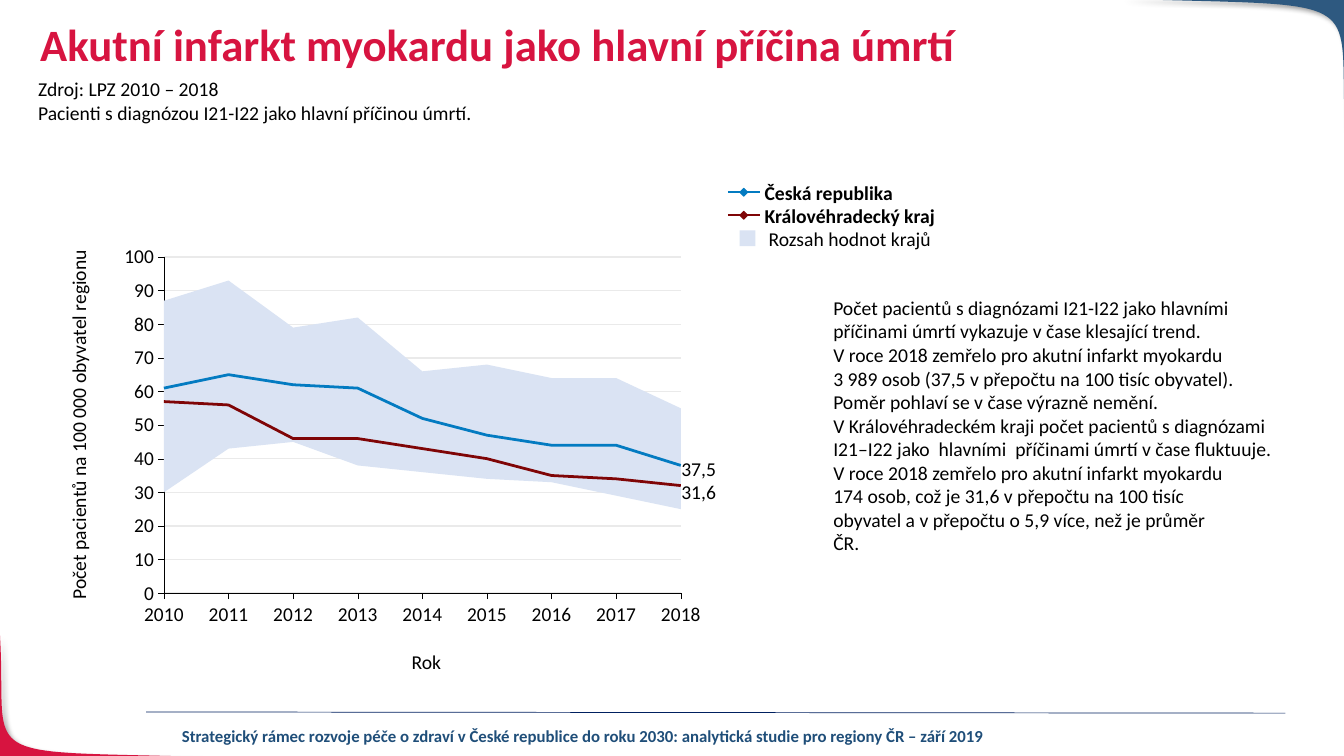
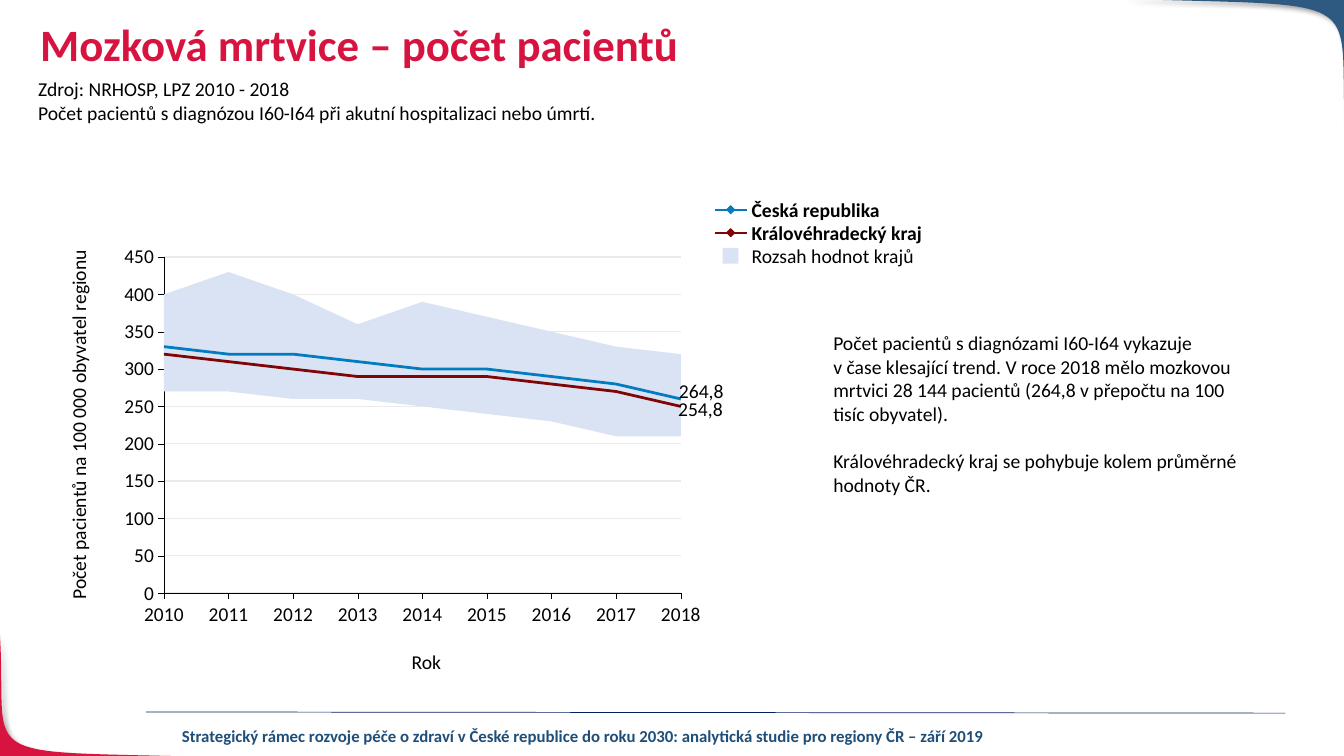
import copy

from pptx import Presentation
from pptx import util as u
from pptx.chart import data as chart_data
from pptx.dml.color import RGBColor
from pptx.enum import chart as charts, shapes, text
from pptx.oxml import parse_xml
from pptx.oxml.ns import nsdecls, qn

COLORS = {
    "red": "D71440",
    "blue": "2E5980",
    "navy": "002060",
    "footer": "1F4E79",
    "black": "000000",
    "grid": "EAEAEA",
    "country": "037BC1",
    "region": "7F0506",
    "range": "DAE3F3",
}
WIDTH, HEIGHT = 33.87, 19.05
BODY = {"name": "Calibri", "size": u.Pt(14), "bold": False}
STRONG = {**BODY, "bold": True}
FOOTER = {**STRONG, "size": u.Pt(12)}
TITLE = {**STRONG, "size": u.Pt(32)}
CHART_BOX = (2.62, 5.79, 15.04, 10.59)
PLOT_PERCENT = (10.2, 6.5, 87.9, 80)
TITLE_BOX = (0.76, 0.44, 29.21, 1.75)
SOURCE_BOX = (0.71, 1.82, 14.8, 1.45)
YEARS = [str(year) for year in range(2010, 2019)]
CORNERS = [
    ("red", [(5.41, 19.08), (-0.86, 18.9), (0.2, 19.28), (0, 16)], (-0.03, 19.08)),
    ("blue", [(28.22, -0.03), (34.8, 0.18), (33.68, -0.25), (33.91, 3.61)],
     (33.91, -0.03)),
]

PAGES = [
    {
        "title": "Akutní infarkt myokardu jako hlavní příčina úmrtí",
        "source": [
            "Zdroj: LPZ 2010 – 2018",
            "Pacienti s diagnózou I21-I22 jako hlavní příčinou úmrtí.",
        ],
        "comment_box": (20.75, 7.33, 12.07, 7.95),
        "comment": [[
            "Počet pacientů s diagnózami I21-I22 jako hlavními",
            "příčinami úmrtí vykazuje v čase klesající trend.",
            "V roce 2018 zemřelo pro akutní infarkt myokardu",
            "3 989 osob (37,5 v přepočtu na 100 tisíc obyvatel).",
            "Poměr pohlaví se v čase výrazně nemění.",
            "V Královéhradeckém kraji počet pacientů s diagnózami",
            "I21–I22 jako  hlavními  příčinami úmrtí v čase fluktuuje.",
            "V roce 2018 zemřelo pro akutní infarkt myokardu",
            "174 osob, což je 31,6 v přepočtu na 100 tisíc",
            "obyvatel a v přepočtu o 5,9 více, než je průměr",
            "ČR.",
        ]],
        "legend": (18.34, 4.54, 0.1),
        "scale": (100, 10),
        "values": {
            "Minimum krajů": [30, 43, 45, 38, 36, 34, 33, 29, 25],
            "Rozsah hodnot krajů": [57, 50, 34, 44, 30, 34, 31, 35, 30],
            "Česká republika": [61, 65, 62, 61, 52, 47, 44, 44, 38],
            "Královéhradecký kraj": [57, 56, 46, 46, 43, 40, 35, 34, 32],
        },
        "labels": [("37,5", 14.55, 5.72), ("31,6", 14.55, 6.3)],
    },
    {
        "title": "Mozková mrtvice – počet pacientů",
        "source": [
            "Zdroj: NRHOSP, LPZ 2010 - 2018",
            "Počet pacientů s diagnózou I60-I64 při akutní hospitalizaci nebo úmrtí.",
        ],
        "comment_box": (20.75, 8.22, 10.62, 7.09),
        "comment": [
            [
                "Počet pacientů s diagnózami I60-I64 vykazuje",
                "v čase klesající trend. V roce 2018 mělo mozkovou",
                "mrtvici 28 144 pacientů (264,8 v přepočtu na 100",
                "tisíc obyvatel).",
            ],
            [
                "Královéhradecký kraj se pohybuje kolem průměrné",
                "hodnoty ČR.",
            ],
        ],
        "legend": (18.01, 4.98, 0),
        "scale": (450, 50),
        "values": {
            "Minimum krajů": [270, 270, 260, 260, 250, 240, 230, 210, 210],
            "Rozsah hodnot krajů": [130, 160, 140, 100, 140, 130, 120, 120, 110],
            "Česká republika": [330, 320, 320, 310, 300, 300, 290, 280, 260],
            "Královéhradecký kraj": [320, 310, 300, 290, 290, 290, 280, 270, 250],
        },
        "labels": [("264,8", 14.49, 3.74), ("254,8", 14.47, 4.21)],
    },
]


def rgb(name):
    return RGBColor.from_string(COLORS[name])


def apply(target, values):
    for name, value in values.items():
        setattr(target, name, value)


def style_font(font, values, color="black"):
    apply(font, values)
    font.color.rgb = rgb(color)


def style_line(line, color, width):
    line.color.rgb = rgb(color)
    line.width = u.Pt(width)


def fill_shape(shape, color):
    shape.shadow.inherit = False
    shape.fill.solid()
    shape.fill.fore_color.rgb = rgb(color)
    shape.line.fill.background()


def add_text(page, place, groups, font=BODY, color="black", align="LEFT",
             wrap=True, inset=True, middle=False):
    box = page.shapes.add_textbox(*map(u.Cm, place))
    frame = box.text_frame
    apply(frame, {
        "word_wrap": wrap,
        "auto_size": text.MSO_AUTO_SIZE.NONE,
        "vertical_anchor": text.MSO_ANCHOR.MIDDLE if middle else text.MSO_ANCHOR.TOP,
    })
    if not inset:
        apply(frame, {f"margin_{side}": 0 for side in ("left", "top", "right", "bottom")})
    lines = [(index, row, line) for index, group in enumerate(groups)
             for row, line in enumerate(group)]
    for number, (index, row, line) in enumerate(lines):
        para = frame.add_paragraph() if number else frame.paragraphs[0]
        para.alignment = getattr(text.PP_ALIGN, align)
        if index and not row:
            para.space_before = u.Pt(17)
        span = para.add_run()
        span.text = line
        style_font(span.font, font, color)
    return box


def add_rule(page, start, end, color, width):
    rule = page.shapes.add_connector(
        shapes.MSO_CONNECTOR.STRAIGHT, *map(u.Cm, (*start, *end)))
    style_line(rule.line, color, width)
    rule.element.spPr.append(parse_xml(f"<a:effectLst {nsdecls('a')}/>"))
    return rule


def curve_points(controls, steps=40):
    for step in range(steps + 1):
        t = step / steps
        weights = ((1 - t) ** 3, 3 * t * (1 - t) ** 2, 3 * t ** 2 * (1 - t), t ** 3)
        yield tuple(u.Cm(sum(w * point[axis] for w, point in zip(weights, controls)))
                    for axis in (0, 1))


def add_corner(page, color, controls, tip):
    points = [*curve_points(controls), tuple(map(u.Cm, tip))]
    builder = page.shapes.build_freeform(*points[0])
    builder.add_line_segments(points[1:], close=True)
    corner = builder.convert_to_shape()
    fill_shape(corner, color)
    effects = corner.element.spPr.find(qn("a:effectLst"))
    effects.append(parse_xml(
        f'<a:outerShdw {nsdecls("a")} blurRad="{u.Pt(4)}" dist="{u.Pt(3)}" '
        f'dir="2700000" rotWithShape="0"><a:srgbClr val="{COLORS["black"]}">'
        '<a:alpha val="40000"/></a:srgbClr></a:outerShdw>'))
    return corner


def decorate_layout(layout, page):
    parts = [add_corner(page, *corner) for corner in CORNERS]
    parts.append(add_rule(page, (3.68, 17.94), (32.39, 17.97), "navy", 0.5))
    parts.append(add_text(page, (4.27, 18.16, 20.85, 0.76), [[
        "Strategický rámec rozvoje péče o zdraví v České republice do roku 2030: "
        "analytická studie pro regiony ČR – září 2019"]], FOOTER, "footer", "CENTER"))
    for number, part in enumerate(parts, 101):
        part.element.xpath(".//p:cNvPr")[0].set("id", str(number))
        layout.shapes.element.append(part.element)


def add_heading(page, title, source):
    heading = page.shapes.title
    apply(heading, dict(zip(("left", "top", "width", "height"), map(u.Cm, TITLE_BOX))))
    frame = heading.text_frame
    apply(frame, {
        "text": title,
        "word_wrap": True,
        "auto_size": text.MSO_AUTO_SIZE.NONE,
        "vertical_anchor": text.MSO_ANCHOR.TOP,
    })
    para = frame.paragraphs[0]
    apply(para, {"alignment": text.PP_ALIGN.LEFT, "line_spacing": 0.9})
    style_font(para.runs[0].font, TITLE, "red")
    add_text(page, SOURCE_BOX, [source], wrap=False)


def split_lines(chart):
    area = chart.element.xpath(".//c:areaChart")[0]
    lines = parse_xml(
        f'<c:lineChart {nsdecls("c")}><c:grouping val="standard"/>'
        '<c:varyColors val="0"/></c:lineChart>')
    for series in area.findall(qn("c:ser"))[2:]:
        lines.append(series)
    for axis in area.findall(qn("c:axId")):
        lines.append(copy.deepcopy(axis))
    area.addnext(lines)


def set_plot_layout(chart, percent):
    plot = chart.element.xpath(".//c:plotArea")[0]
    for layout in plot.findall(qn("c:layout")):
        plot.remove(layout)
    modes = "".join(f'<c:{name}Mode val="edge"/>' for name in "xy")
    sizes = "".join(f'<c:{name} val="{value / 100:.3f}"/>'
                    for name, value in zip("xywh", percent))
    plot.insert(0, parse_xml(
        f'<c:layout {nsdecls("c")}><c:manualLayout><c:layoutTarget val="inner"/>'
        f"{modes}{sizes}</c:manualLayout></c:layout>"))
    plot.xpath(".//c:crossBetween")[0].set("val", "midCat")


def add_trend_chart(page, place, values, scale, labels):
    left, top = place[:2]
    data = chart_data.CategoryChartData()
    data.categories = YEARS
    for name, numbers in values.items():
        data.add_series(name, numbers)
    chart = page.shapes.add_chart(
        charts.XL_CHART_TYPE.AREA_STACKED, *map(u.Cm, place), data).chart
    apply(chart, {"has_legend": False, "has_title": False})
    style_font(chart.font, {"name": "Arial", "size": u.Pt(8)})
    split_lines(chart)
    set_plot_layout(chart, PLOT_PERCENT)
    bands, lines = chart.plots
    bands.vary_by_categories = False
    floor, spread = bands.series
    floor.format.fill.background()
    floor.format.line.fill.background()
    spread.format.fill.solid()
    spread.format.fill.fore_color.rgb = rgb("range")
    spread.format.line.fill.background()
    for series, color in zip(lines.series, ("country", "region")):
        style_line(series.format.line, color, 2)
        series.marker.style = charts.XL_MARKER_STYLE.NONE
        series.smooth = False
    for axis in (chart.category_axis, chart.value_axis):
        axis.major_tick_mark = charts.XL_TICK_MARK.OUTSIDE
        axis.minor_tick_mark = charts.XL_TICK_MARK.NONE
        style_line(axis.format.line, "black", 0.25)
        style_font(axis.tick_labels.font, BODY)
    chart.category_axis.has_major_gridlines = False
    maximum, step = scale
    apply(chart.value_axis, {"minimum_scale": 0, "maximum_scale": maximum,
                             "major_unit": step, "has_major_gridlines": True})
    style_line(chart.value_axis.major_gridlines.format.line, "grid", 1)
    apply(chart.value_axis.tick_labels,
          {"number_format": "#,##0", "number_format_is_linked": False})
    caption = add_text(page, (left - 5.34, top + 4.48, 9.4, 0.86),
                       [["Počet pacientů na 100 000 obyvatel regionu"]],
                       align="CENTER", wrap=False)
    caption.rotation = 270
    add_text(page, (left + 7.39, top + 10.59, 1.47, 0.36), [["Rok"]],
             align="CENTER", inset=False)
    for label, across, down in labels:
        add_text(page, (left + across, top + down, 1.83, 0.61), [[label]],
                 inset=False, middle=True)


def add_legend(page, left, top, indent):
    pitch, height, key = 0.58, 0.61, 0.81
    entries = [("Česká republika", "country"), ("Královéhradecký kraj", "region"),
               ("Rozsah hodnot krajů", "range")]
    for row, (name, color) in enumerate(entries):
        y = top + row * pitch
        middle = y + height / 2
        is_range = color == "range"
        shift = indent if is_range else 0
        if is_range:
            kind, size, x = shapes.MSO_SHAPE.RECTANGLE, 0.4, left + 0.2 + shift
        else:
            kind, size, x = shapes.MSO_SHAPE.DIAMOND, 0.2, left + key / 2 - 0.1
            add_rule(page, (left, middle), (left + key, middle), color, 1.5)
        mark = page.shapes.add_shape(
            kind, *map(u.Cm, (x, middle - size / 2, size, size)))
        fill_shape(mark, color)
        if not is_range:
            style_line(mark.line, color, 0.75)
        add_text(page, (left + 0.93 + shift, y, 4.95, height), [[name]],
                 BODY if is_range else STRONG, inset=False, middle=True)


def main():
    deck = Presentation()
    deck.slide_width, deck.slide_height = u.Cm(WIDTH), u.Cm(HEIGHT)
    layout = deck.slide_layouts.get_by_name("Title Only")
    for number, content in enumerate(PAGES):
        page = deck.slides.add_slide(layout)
        if not number:
            decorate_layout(layout, page)
        add_heading(page, content["title"], content["source"])
        add_trend_chart(page, CHART_BOX, content["values"], content["scale"],
                        content["labels"])
        add_legend(page, *content["legend"])
        add_text(page, content["comment_box"], content["comment"], wrap=False)
    deck.save("out.pptx")


if __name__ == "__main__":
    main()
